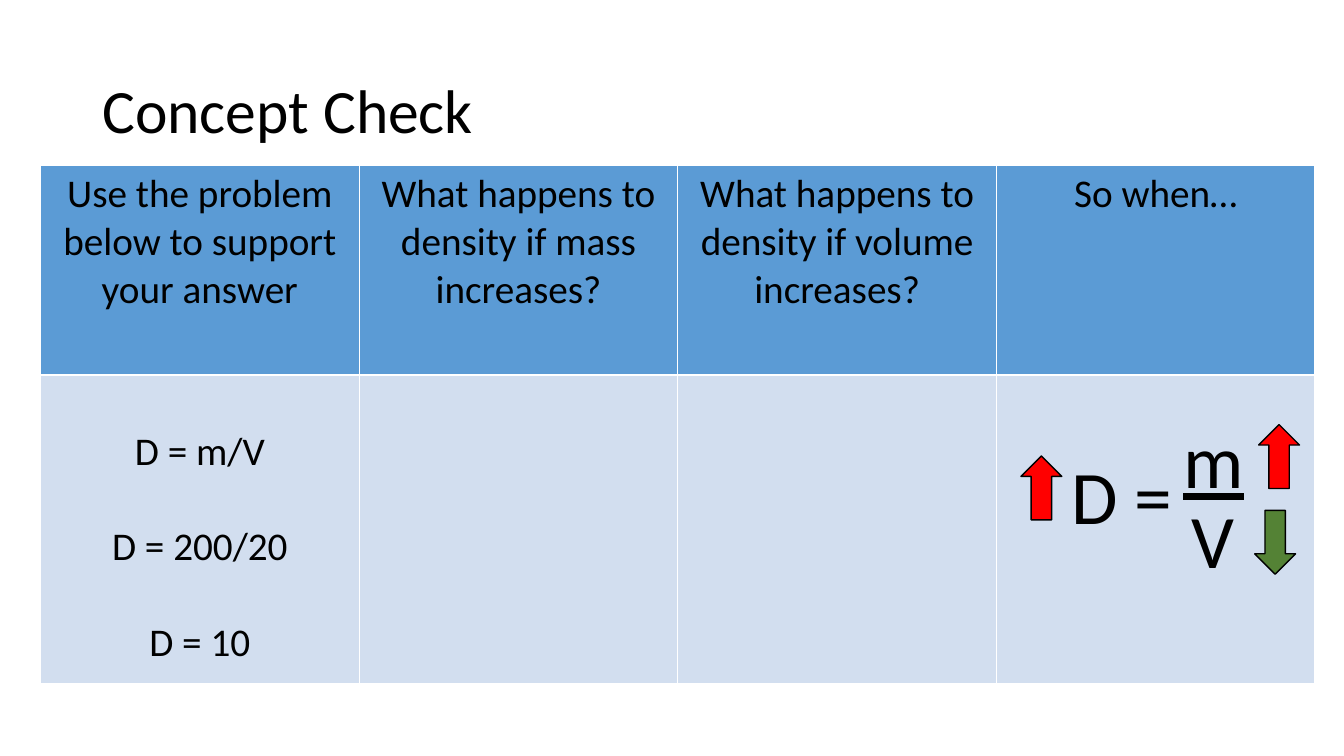
from pptx import Presentation
from pptx.dml.color import RGBColor
from pptx.enum.shapes import MSO_SHAPE
from pptx.enum.text import MSO_ANCHOR, PP_ALIGN
from pptx.util import Cm, Pt

HEADS = [
    "Use the problem below to support your answer",
    "What happens to density if mass increases?",
    "What happens to density if volume increases?",
    "So when…",
]
STEPS = ["D = m/V", "D = 200/20", "D = 10"]
BLACK, RED, GREEN = "000000", "FF0000", "548235"
BLUE, PALE = "5B9BD5", "D2DEEF"
LINE = 34


def paint(fill, color):
    """Give a fill one solid colour."""
    fill.solid()
    fill.fore_color.rgb = RGBColor.from_string(color)


def style(para, size):
    """Set the font of a paragraph."""
    font = para.font
    font.name, font.size, font.bold = "Calibri", Pt(size), False
    font.color.rgb = RGBColor.from_string(BLACK)


def add_text(slide, text, left, top, width, height, size=54):
    """Add a text box of one line and return it."""
    box = slide.shapes.add_textbox(Cm(left), Cm(top), Cm(width), Cm(height))
    frame = box.text_frame
    frame.word_wrap = True
    frame.text = text
    style(frame.paragraphs[0], size)
    return box


def add_arrow(slide, left, top, color, turn=0):
    """Add an outlined block arrow."""
    arrow = slide.shapes.add_shape(
        MSO_SHAPE.UP_ARROW, Cm(left), Cm(top), Cm(1.03), Cm(1.61))
    arrow.shadow.inherit = False
    arrow.rotation = turn
    paint(arrow.fill, color)
    paint(arrow.line.fill, BLACK)
    arrow.line.width = Pt(1)


def fill_cell(cell, lines, color):
    """Write centred lines, one line apart, into a coloured cell."""
    paint(cell.fill, color)
    cell.text = "\n".join(lines)
    for index, para in enumerate(cell.text_frame.paragraphs):
        para.alignment = PP_ALIGN.CENTER
        style(para, 28)
        if index:
            para.space_before = Pt(LINE)


def add_grid(slide):
    """Add the table of questions and worked steps."""
    frame = slide.shapes.add_table(
        2, len(HEADS), Cm(1.02), Cm(4.17), Cm(32.12), Cm(13.05))
    table = frame.table
    for row, height in zip(table.rows, (5.28, 7.77)):
        row.height = Cm(height)
    for col, head in enumerate(HEADS):
        table.columns[col].width = Cm(8.03)
        fill_cell(table.cell(0, col), [head], BLUE)
        fill_cell(table.cell(1, col), [] if col else STEPS, PALE)
    table.cell(1, 0).margin_top = Cm(0.13) + Pt(LINE)


def main():
    """Build the slide and save it."""
    deck = Presentation()
    deck.slide_width, deck.slide_height = Cm(33.87), Cm(19.05)
    slide = deck.slides.add_slide(deck.slide_layouts[6])
    title = add_text(slide, "Concept Check", 2.33, 1.01, 29.21, 3.68, 44)
    title.text_frame.vertical_anchor = MSO_ANCHOR.MIDDLE
    title.text_frame.paragraphs[0].line_spacing = 0.9
    add_grid(slide)
    add_text(slide, "D =", 26.75, 11.18, 3.15, 2.57)
    mass = add_text(slide, "m", 29.57, 10.29, 1.83, 2.57)
    mass.text_frame.paragraphs[0].font.underline = True
    add_text(slide, "V", 29.79, 12.29, 1.73, 2.57)
    add_arrow(slide, 31.72, 10.7, RED)
    add_arrow(slide, 25.73, 11.49, RED)
    add_arrow(slide, 31.62, 12.86, GREEN, 180)
    deck.save("out.pptx")


if __name__ == "__main__":
    main()
